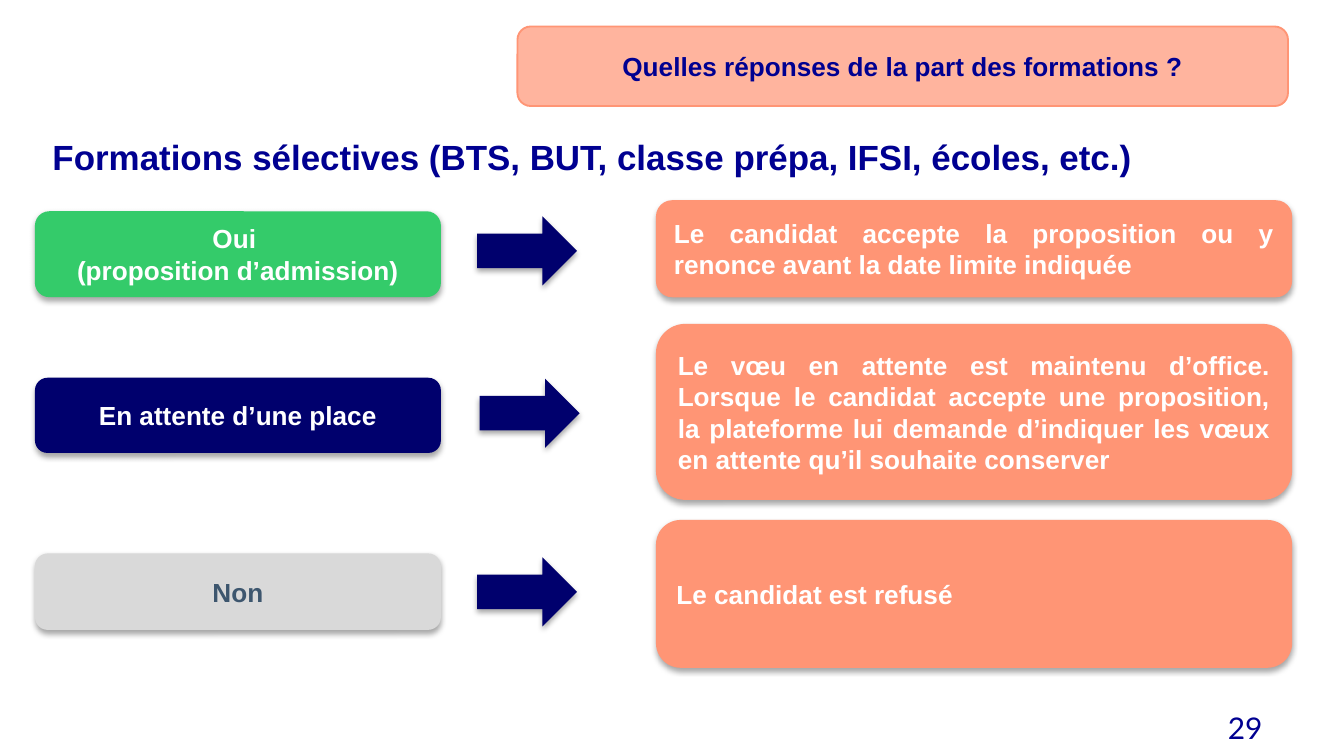
import copy

import lxml.etree
import pptx
import pptx.util
import pptx.dml.color
import pptx.enum.shapes
import pptx.enum.text
import pptx.oxml
import pptx.oxml.ns

Pt = pptx.util.Pt
SHAPE = pptx.enum.shapes.MSO_SHAPE
ALIGN = pptx.enum.text.PP_ALIGN
ANCHOR = pptx.enum.text.MSO_ANCHOR
qn = pptx.oxml.ns.qn

NAVY, BLUE, CORAL, WHITE = "00006D", "000091", "FF9575", "FFFFFF"

BANNER = "Quelles réponses de la part des formations ?"
HEADING = "Formations sélectives (BTS, BUT, classe prépa, IFSI, écoles, etc.)"
PAGE_NUMBER = "29"

ROWS = [
    dict(answer="Oui \v(proposition d’admission)", fill="34CB6A", color=WHITE,
         answer_span=(113.2, 46), arrow_at=(255.6, 115.9),
         outcome="Le candidat accepte la proposition ou y renonce avant la date limite indiquée ",
         outcome_span=(107.3, 52)),
    dict(answer="En attente d’une place", fill=NAVY, color=WHITE,
         answer_span=(202.4, 40.3), arrow_at=(257, 202.9),
         outcome="Le vœu en attente est maintenu d’office. Lorsque le candidat accepte une "
                 "proposition, la plateforme lui demande d’indiquer les vœux en attente "
                 "qu’il souhaite conserver",
         outcome_span=(173.5, 94.3)),
    dict(answer="Non", fill="D9D9D9", color="3D566E",
         answer_span=(296.5, 41), arrow_at=(255.6, 298.6),
         outcome="Le candidat est refusé",
         outcome_span=(278.6, 79.2)),
]

ANSWER_LEFT, ANSWER_WIDTH = 18.7, 217.5
OUTCOME_LEFT, OUTCOME_WIDTH = 351.4, 340.8
ARROW_SIZE = (53.5, 37)

SHADOW = (
    '<a:effectLst xmlns:a="http://schemas.openxmlformats.org/drawingml/2006/main">'
    '<a:outerShdw blurRad="39370" dist="22860" dir="5400000" rotWithShape="0">'
    '<a:srgbClr val="000000"><a:alpha val="35000"/></a:srgbClr>'
    '</a:outerShdw></a:effectLst>'
)


def rgb(color):
    return pptx.dml.color.RGBColor.from_string(color)


def write(holder, text, size=14, font="Arial", color=WHITE, bold=True,
          align=ALIGN.CENTER, anchor=ANCHOR.MIDDLE, margins=(7.2, 3.6)):
    frame = holder.text_frame
    frame.word_wrap = True
    frame.vertical_anchor = anchor
    frame.margin_left = frame.margin_right = Pt(margins[0])
    frame.margin_top = frame.margin_bottom = Pt(margins[1])
    paragraph = frame.paragraphs[0]
    paragraph.text = text
    paragraph.alignment = align
    for run in paragraph.runs:
        run.font.size = Pt(size)
        run.font.name = font
        run.font.bold = bold
        run.font.color.rgb = rgb(color)
    for line_break in paragraph._p.findall(qn("a:br")):
        line_break.insert(0, copy.deepcopy(paragraph.runs[0]._r.rPr))


def add_block(slide, kind, box, fill, shadow=True):
    block = slide.shapes.add_shape(kind, *map(Pt, box))
    block.fill.solid()
    block.fill.fore_color.rgb = rgb(fill)
    block.line.fill.background()
    if shadow:
        block._element.spPr.append(pptx.oxml.parse_xml(SHADOW))
    else:
        block.shadow.inherit = False
    return block


def main():
    deck = pptx.Presentation()
    deck.slide_width, deck.slide_height = Pt(720), Pt(405)
    slide = deck.slides.add_slide(deck.slide_layouts[6])

    heading = slide.shapes.add_textbox(Pt(18.7), Pt(67.7), Pt(674), Pt(62))
    write(heading, HEADING, size=18.7, color=BLUE, align=ALIGN.LEFT,
          anchor=ANCHOR.TOP, margins=(9.4, 5))

    for row in ROWS:
        top, height = row["answer_span"]
        answer = add_block(slide, SHAPE.ROUNDED_RECTANGLE,
                           (ANSWER_LEFT, top, ANSWER_WIDTH, height), row["fill"])
        write(answer, row["answer"], color=row["color"])

        add_block(slide, SHAPE.RIGHT_ARROW, row["arrow_at"] + ARROW_SIZE, NAVY)

        top, height = row["outcome_span"]
        outcome = add_block(slide, SHAPE.ROUNDED_RECTANGLE,
                            (OUTCOME_LEFT, top, OUTCOME_WIDTH, height), CORAL)
        write(outcome, row["outcome"], align=ALIGN.JUSTIFY)

    page = slide.shapes.add_textbox(Pt(598.3), Pt(376.6), Pt(85), Pt(28))
    write(page, PAGE_NUMBER, size=16, font="Lato", color=BLUE, bold=False,
          align=ALIGN.RIGHT, anchor=ANCHOR.TOP)

    banner = add_block(slide, SHAPE.ROUNDED_RECTANGLE,
                       (277.2, 14.2, 412.8, 42.6), CORAL, shadow=False)
    tint = banner._element.spPr.find(qn("a:solidFill")).find(qn("a:srgbClr"))
    lxml.etree.SubElement(tint, qn("a:alpha")).set("val", "70000")
    banner.line.color.rgb = rgb(CORAL)
    banner.line.width = Pt(1)
    write(banner, BANNER, color=BLUE)

    deck.save("out.pptx")


if __name__ == "__main__":
    main()
